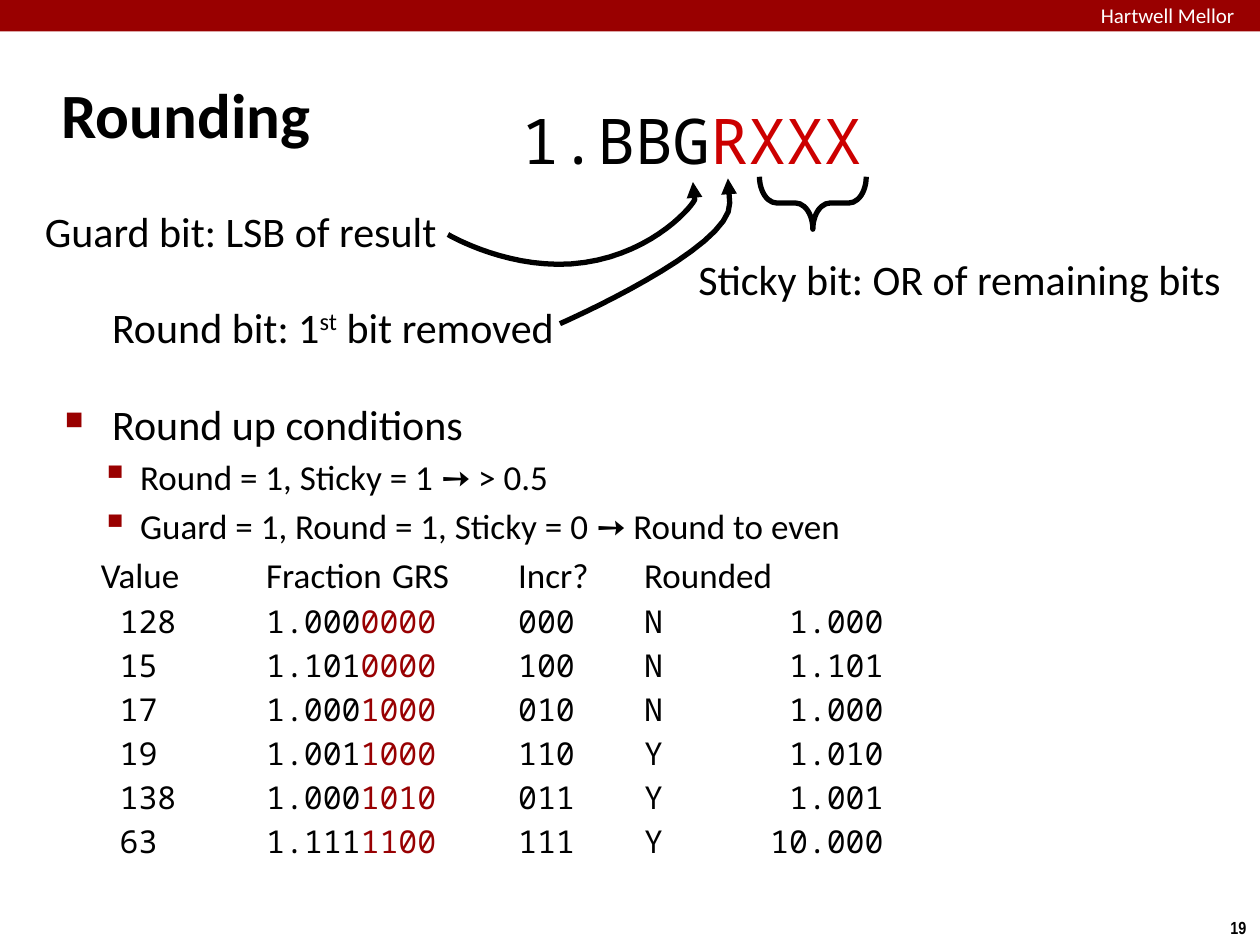
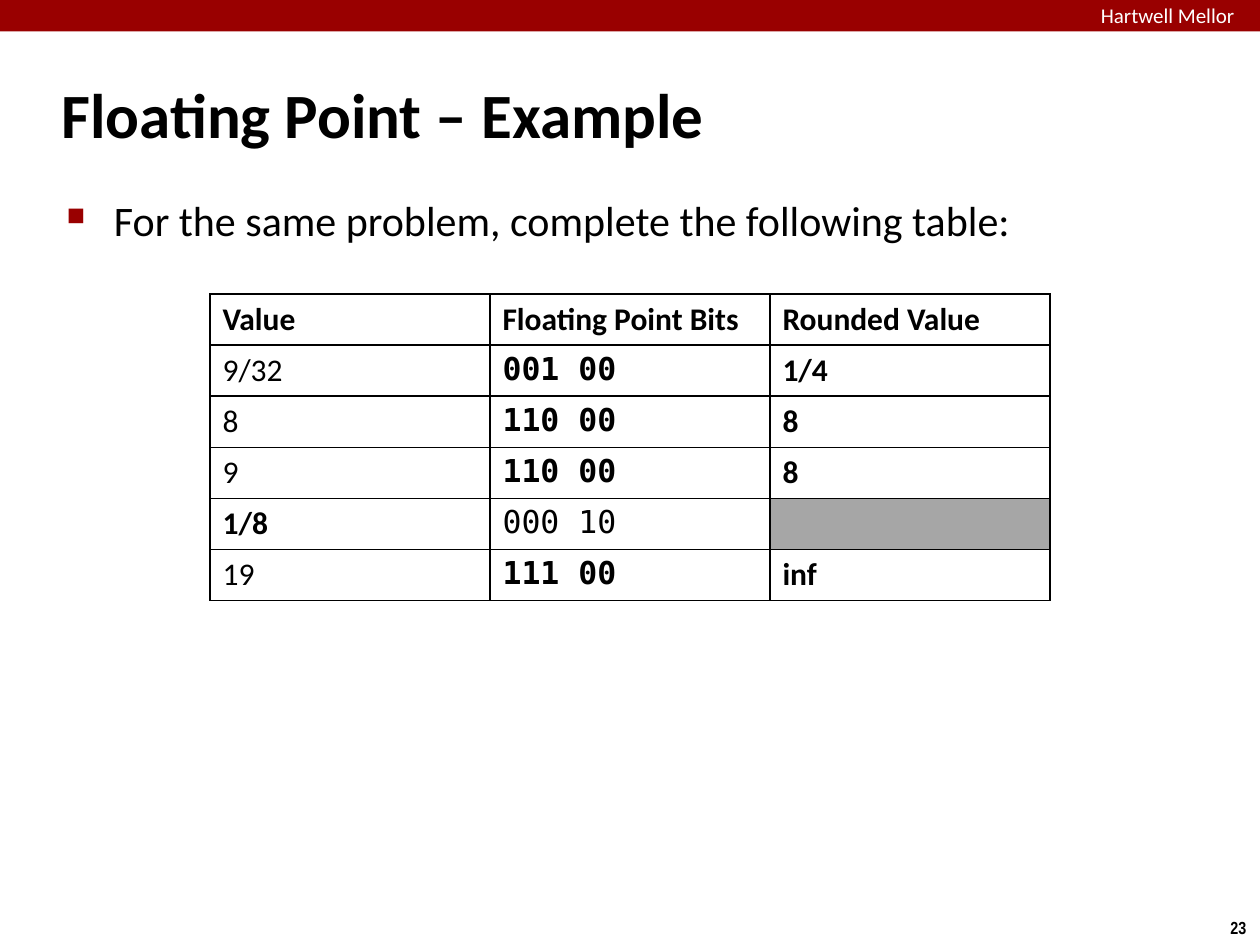
from lxml import etree
from pptx import Presentation
from pptx.dml.color import RGBColor
from pptx.enum.shapes import MSO_SHAPE
from pptx.enum.text import MSO_ANCHOR, MSO_AUTO_SIZE, PP_ALIGN
from pptx.oxml.ns import qn
from pptx.util import Pt

RECT, BRACE = MSO_SHAPE.RECTANGLE, MSO_SHAPE.LEFT_BRACE
LEFT, RIGHT = PP_ALIGN.LEFT, PP_ALIGN.RIGHT

# Shared style
BLACK, WHITE, BAND, GREY = "000000", "FFFFFF", "990000", "A6A6A6"
REMOVED, BRIGHT = "980002", "CC0000"
SANS, MONO, TABLE_MONO, NARROW = "Calibri", "Noto Sans Mono", "DejaVu Sans Mono", "Arial Narrow"
SCHOOL = "Hartwell Mellor"

# Bullet styles: margin, hanging indent, character, size in percent
TOP = (27, 27, "■", 60)
SUB = (43, 22.5, "▪", 110)
PLAIN = (43, 22.5, None, None)

# Rounding slide: value, kept bits, removed bits, GRS, increment, result
CONDITIONS = ["Round = 1, Sticky = 1 ➙ > 0.5",
              "Guard = 1, Round = 1, Sticky = 0 ➙ Round to even"]
HEADINGS = ["Value", "Fraction", "GRS", "Incr?", "Rounded"]
ROUNDED = [
    ("128", "1.000", "0000", "000", "N", " 1.000"),
    ("15", "1.101", "0000", "100", "N", " 1.101"),
    ("17", "1.000", "1000", "010", "N", " 1.000"),
    ("19", "1.001", "1000", "110", "Y", " 1.010"),
    ("138", "1.000", "1010", "011", "Y", " 1.001"),
    ("63", "1.111", "1100", "111", "Y", "10.000"),
]
# Curved arrows: start, cubic segments (two controls and an end), arrow tip
GUARD_ARROW = ((256, 134), [((256, 134), (293, 156), (334, 150)),
                            ((375, 144), (397, 116), (397, 114))], (396, 104))
ROUND_ARROW = ((320, 185), [((320, 185), (418.5, 142), (417, 116))], (416, 102))

# Example slide: the answers to fill in are bold
EXAMPLE_HEAD = ["Value", "Floating Point Bits", "Rounded Value"]
EXAMPLE_ROWS = [("9/32", "001 00", "1/4"), ("8", "110 00", "8"), ("9", "110 00", "8"),
                ("1/8", "000 10", ""), ("19", "111 00", "inf")]
GIVEN = {"9/32", "9", "19", "000 10"}


def rgb(value):
    return RGBColor.from_string(value)


def add_run(p, text, size, font=SANS, color=BLACK, bold=False):
    r = p.add_run()
    r.text = text
    r.font.size, r.font.name, r.font.bold = Pt(size), font, bold
    r.font.color.rgb = rgb(color)
    return r


def add_text(s, box, runs=(), inset=None, wrap=False, align=LEFT):
    """Add a text box; each run is (text, size, font, color, bold)."""
    tf = s.shapes.add_textbox(*map(Pt, box)).text_frame
    tf.word_wrap = wrap
    if inset is not None:
        tf.margin_left = tf.margin_right = tf.margin_top = tf.margin_bottom = Pt(inset)
    p = tf.paragraphs[0]
    p.alignment = align
    for run in runs:
        add_run(p, *run)
    return tf


def style_bullet(p, style):
    margin, hang, char, percent = style
    pPr = p._p.get_or_add_pPr()
    pPr.set("marL", str(Pt(margin)))
    pPr.set("indent", str(-Pt(hang)))
    pPr.set("defTabSz", str(Pt(72)))
    before = etree.SubElement(pPr, qn("a:spcBef"))
    etree.SubElement(before, qn("a:spcPct"), val="20000")
    if char:
        color = etree.SubElement(pPr, qn("a:buClr"))
        etree.SubElement(color, qn("a:srgbClr"), val=BAND)
        etree.SubElement(pPr, qn("a:buSzPct"), val=str(percent * 1000))
        etree.SubElement(pPr, qn("a:buChar"), char=char)
    else:
        etree.SubElement(pPr, qn("a:buNone"))


def add_body(s, box, paragraphs):
    """Each paragraph is (bullet style, runs)."""
    tf = add_text(s, box, wrap=True)
    for i, (style, runs) in enumerate(paragraphs):
        p = tf.add_paragraph() if i else tf.paragraphs[0]
        style_bullet(p, style)
        for run in runs:
            add_run(p, *run)


def add_slide(prs, title, number):
    s = prs.slides.add_slide(prs.slide_layouts[5])
    band = s.shapes.add_shape(RECT, 0, 0, prs.slide_width, Pt(18))
    band.shadow.inherit = False
    band.fill.solid()
    band.fill.fore_color.rgb = rgb(BAND)
    band.line.fill.background()
    add_text(s, (622, -2, 103, 22), [(SCHOOL, 12, SANS, WHITE)], wrap=True)
    add_text(s, (696, 520.5, 24.5, 19.5), [(str(number), 10, NARROW, BLACK, True)])

    sp = s.shapes.title
    sp.left, sp.top, sp.width, sp.height = map(Pt, (28, 34.5, 598, 60))
    tf = sp.text_frame
    tf.auto_size, tf.vertical_anchor = MSO_AUTO_SIZE.NONE, MSO_ANCHOR.MIDDLE
    p = tf.paragraphs[0]
    p.alignment = LEFT
    add_run(p, title, 36, bold=True)
    return s


def style_line(sp):
    sp.shadow.inherit = False
    sp.fill.background()
    sp.line.color.rgb = rgb(BLACK)
    sp.line.width = Pt(3)


def curve_points(start, segments, steps=16):
    for c1, c2, end in segments:
        for i in range(1, steps + 1):
            t = i / steps
            u = 1 - t
            weights = (u ** 3, 3 * u * u * t, 3 * u * t * t, t ** 3)
            yield tuple(sum(w * q[axis] for w, q in zip(weights, (start, c1, c2, end)))
                        for axis in (0, 1))
        start = end


def add_curved_arrow(s, start, segments, tip):
    builder = s.shapes.build_freeform(*map(Pt, start))
    points = [*curve_points(start, segments), tip]
    builder.add_line_segments([(Pt(x), Pt(y)) for x, y in points], close=False)
    sp = builder.convert_to_shape()
    style_line(sp)
    etree.SubElement(sp.line._get_or_add_ln(), qn("a:tailEnd"), type="triangle")


def build_rounding(prs):
    s = add_slide(prs, "Rounding", 19)

    # Conditions and tabbed results
    paragraphs = [(TOP, [("Round up conditions", 24)])]
    paragraphs += [(SUB, [(text, 20)]) for text in CONDITIONS]
    paragraphs.append((PLAIN, [("\t".join(HEADINGS), 20)]))
    for value, kept, removed, grs, incr, result in ROUNDED:
        paragraphs.append((PLAIN, [
            (f" {value}\t{kept}", 18, MONO),
            (f"{removed}\t", 18, MONO, REMOVED),
            (f"{grs}\t{incr}\t{result}", 18, MONO),
        ]))
    add_body(s, (30, 224, 660, 314), paragraphs)

    # Bit pattern and its labels
    add_text(s, (295, 55, 202, 51),
             [("1.BBG", 36, MONO), ("RXXX", 36, MONO, BRIGHT)], inset=3)
    add_text(s, (11.5, 114.5, 241, 35), [("Guard bit: LSB of result", 24)],
             inset=3, wrap=True, align=RIGHT)
    tf = add_text(s, (52.5, 169, 267, 35),
                  [("Round bit: 1", 24), ("st", 24), (" bit removed", 24)],
                  inset=3, align=RIGHT)
    tf.paragraphs[0].runs[1].font._element.set("baseline", "30000")
    add_text(s, (396, 142, 314, 35), [("Sticky bit: OR of remaining bits", 24)], inset=3)

    # Brace and arrows
    brace = s.shapes.add_shape(BRACE, *map(Pt, (449.5, 85.5, 30, 61)))
    brace.rotation = 270
    brace.adjustments[0] = 0.33
    style_line(brace)
    for arrow in (ROUND_ARROW, GUARD_ARROW):
        add_curved_arrow(s, *arrow)


def add_borders(cell):
    tcPr = cell._tc.get_or_add_tcPr()
    for i, side in enumerate(("a:lnL", "a:lnR", "a:lnT", "a:lnB")):
        ln = etree.Element(qn(side), w=str(Pt(1)))
        fill = etree.SubElement(ln, qn("a:solidFill"))
        etree.SubElement(fill, qn("a:srgbClr"), val=BLACK)
        tcPr.insert(i, ln)


def build_example(prs):
    s = add_slide(prs, "Floating Point – Example", 23)
    add_body(s, (31, 107.5, 622, 392),
             [(TOP, [("For the same problem, complete the following table:", 24)])])

    # Table of values
    rows = [EXAMPLE_HEAD, *EXAMPLE_ROWS]
    table = s.shapes.add_table(len(rows), 3, *map(Pt, (120, 168, 480, 175.2))).table
    table.first_row = table.horz_banding = False
    for i, row in enumerate(rows):
        for j, text in enumerate(row):
            cell = table.cell(i, j)
            if text:
                cell.fill.background()
                font = TABLE_MONO if i and j == 1 else SANS
                given = text in GIVEN or (text == "8" and j == 0)
                add_run(cell.text_frame.paragraphs[0], text, 18, font, bold=not given)
            else:
                cell.fill.solid()
                cell.fill.fore_color.rgb = rgb(GREY)
            add_borders(cell)


def main():
    prs = Presentation()
    prs.slide_width, prs.slide_height = Pt(720), Pt(540)
    build_rounding(prs)
    build_example(prs)
    prs.save("out.pptx")


if __name__ == "__main__":
    main()
